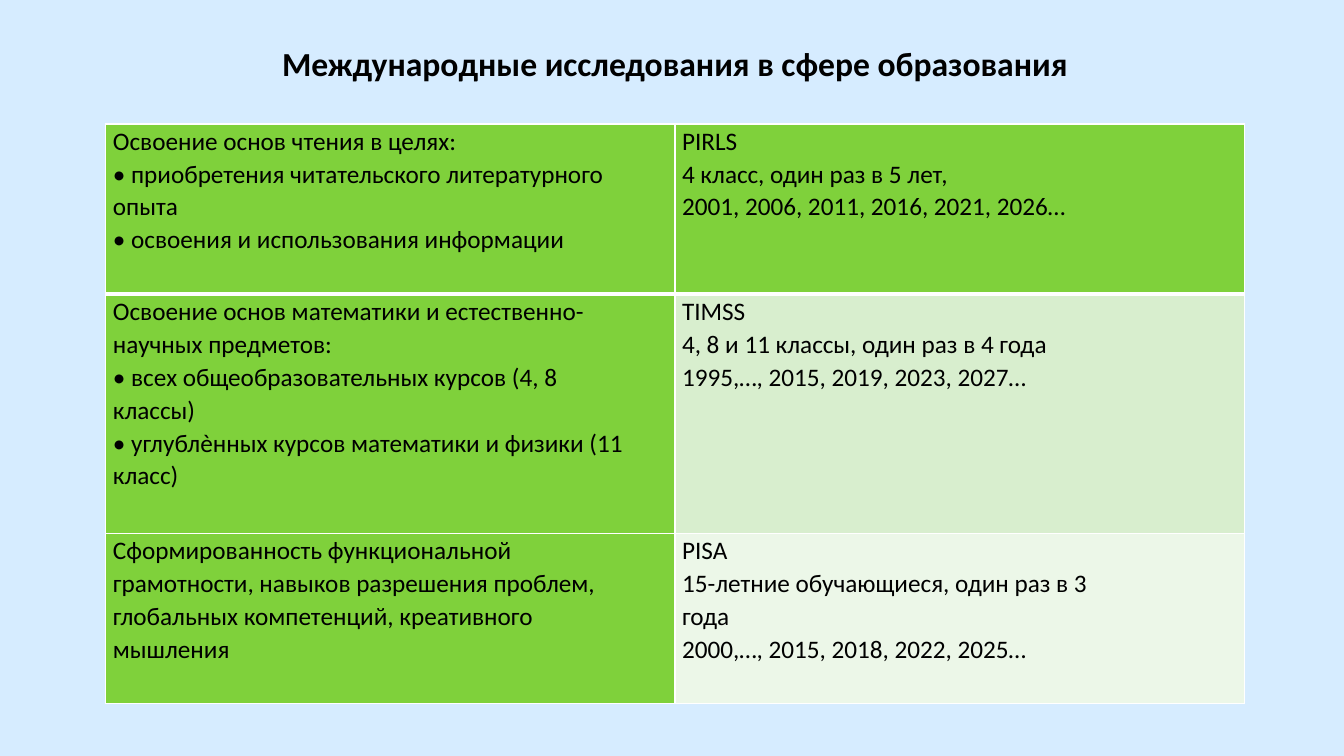
from lxml import etree
from pptx import Presentation
from pptx.dml.color import RGBColor
from pptx.enum.text import MSO_ANCHOR, PP_ALIGN
from pptx.oxml.ns import qn
from pptx.util import Inches, Pt

CENTER, JUSTIFY = PP_ALIGN.CENTER, PP_ALIGN.JUSTIFY
BOTTOM = MSO_ANCHOR.BOTTOM

TITLE = "Международные исследования в сфере образования"
STUDIES = [
    (1.69, "7FD13B",
     ["Освоение основ чтения в целях:",
      "• приобретения читательского литературного",
      "опыта",
      "• освоения и использования информации"],
     ["PIRLS",
      "4 класс, один раз в 5 лет,",
      "2001, 2006, 2011, 2016, 2021, 2026…"]),
    (2.37, "D8EECE",
     ["Освоение основ математики и естественно-",
      "научных предметов:",
      "• всех общеобразовательных курсов (4, 8",
      "классы)",
      "• углублѐнных курсов математики и физики (11",
      "класс)"],
     ["TIMSS",
      "4, 8 и 11 классы, один раз в 4 года",
      "1995,…, 2015, 2019, 2023, 2027…"]),
    (1.69, "ECF7E8",
     ["Сформированность функциональной",
      "грамотности, навыков разрешения проблем,",
      "глобальных компетенций, креативного",
      "мышления"],
     ["PISA",
      "15-летние обучающиеся, один раз в 3",
      "года",
      "2000,…, 2015, 2018, 2022, 2025…"]),
]
FONT, BACKGROUND, TEXT, GREEN, WHITE = "Calibri", "D6ECFF", "000000", "7FD13B", "FFFFFF"
LEFT, WIDTH = 1.05, 11.29
THIN, THICK = 1, 3


def paint(fill, color):
    fill.solid()
    fill.fore_color.rgb = RGBColor.from_string(color)


def write(tf, lines, size, align, bold=False, spacing=None):
    tf.text = "\n".join(lines)
    for p in tf.paragraphs:
        p.alignment = align
        p.line_spacing = spacing
        for r in p.runs:
            r.font.name = FONT
            r.font.size = Pt(size)
            r.font.bold = bold
            paint(r.font.fill, TEXT)


def add_borders(cell, top, bottom):
    tcPr = cell._tc.get_or_add_tcPr()
    for side, width in (("L", THIN), ("R", THIN), ("T", top), ("B", bottom)):
        ln = etree.SubElement(tcPr, qn(f"a:ln{side}"), w=str(Pt(width)))
        solid = etree.SubElement(ln, qn("a:solidFill"))
        etree.SubElement(solid, qn("a:srgbClr"), val=WHITE)


prs = Presentation()
prs.slide_width, prs.slide_height = Inches(13.33), Inches(7.5)
s = prs.slides.add_slide(prs.slide_layouts[6])
paint(s.background.fill, BACKGROUND)

sp = s.shapes.add_textbox(Inches(LEFT), Inches(0.39), Inches(WIDTH), Inches(0.48))
tf = sp.text_frame
tf.word_wrap = True
tf.vertical_anchor = BOTTOM
write(tf, [TITLE], 24, CENTER, bold=True)

height = sum(study[0] for study in STUDIES)
table = s.shapes.add_table(len(STUDIES), 2, Inches(LEFT), Inches(1.23),
                           Inches(WIDTH), Inches(height)).table
for i, (row_height, color, goals, schedule) in enumerate(STUDIES):
    table.rows[i].height = Inches(row_height)
    top = THICK if i == 1 else THIN
    bottom = THICK if i == 0 else THIN
    for j, (lines, fill) in enumerate([(goals, GREEN), (schedule, color)]):
        cell = table.cell(i, j)
        cell.margin_left = cell.margin_right = Inches(0.07)
        cell.margin_top = cell.margin_bottom = 0
        write(cell.text_frame, lines, 18, JUSTIFY, spacing=1.07)
        add_borders(cell, top, bottom)
        paint(cell.fill, fill)

prs.save("out.pptx")
